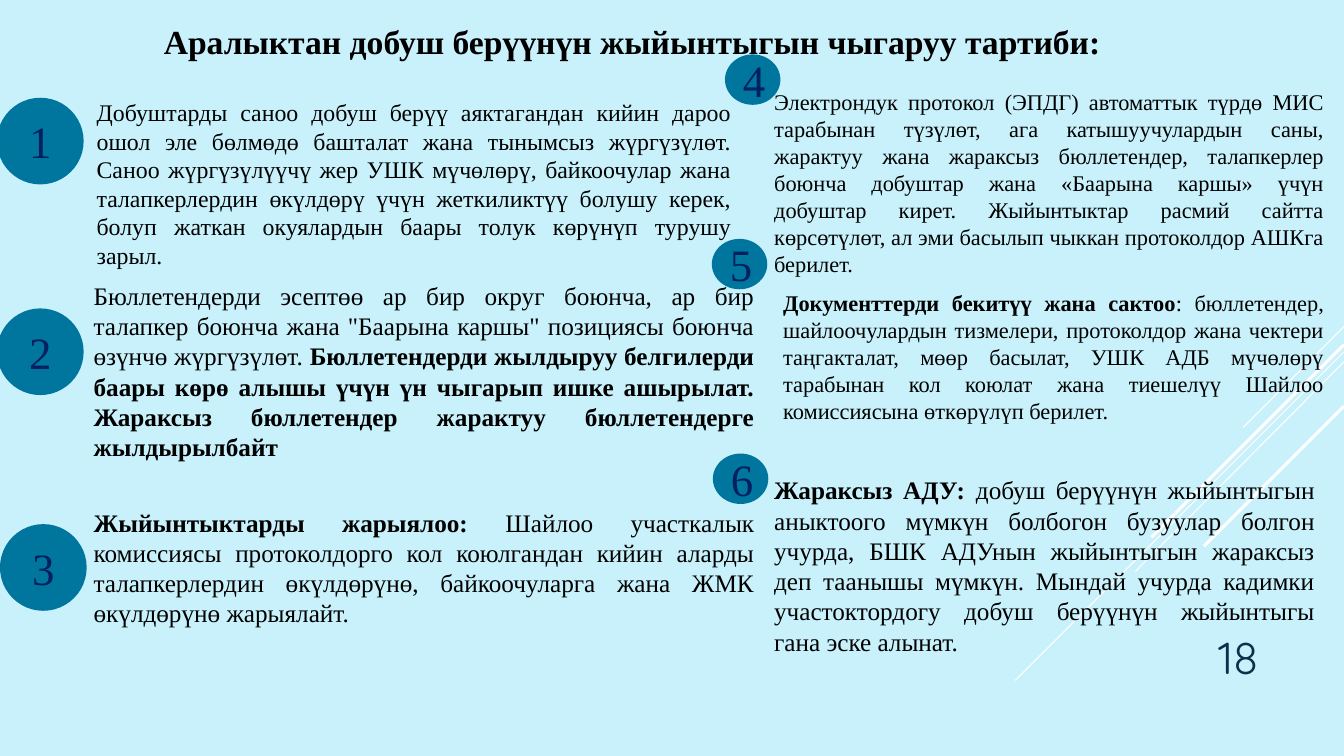
from dataclasses import dataclass

from lxml.etree import SubElement
from pptx import Presentation
from pptx.dml.color import RGBColor
from pptx.enum.shapes import MSO_CONNECTOR, MSO_SHAPE
from pptx.enum.text import MSO_ANCHOR, PP_ALIGN
from pptx.oxml.ns import qn
from pptx.util import Inches, Pt


@dataclass(frozen=True)
class Theme:
    background: RGBColor = RGBColor.from_string("C8F1FB")
    ray: RGBColor = RGBColor.from_string("FFFFFF")
    circle: RGBColor = RGBColor.from_string("00759E")
    digit: RGBColor = RGBColor.from_string("002060")
    text: RGBColor = RGBColor.from_string("000000")
    page: RGBColor = RGBColor.from_string("0A304A")
    font: str = "Times New Roman"
    page_font: str = "Quicksand"
    title_size: int = 24
    number_size: int = 32
    large: int = 18
    medium: int = 17
    small: int = 16


theme = Theme()


def style(p, size, color, align, font=theme.font):
    p.alignment = align
    p.font.name = font
    p.font.size = Pt(size)
    p.font.color.rgb = color


def add_text(box, runs, size, align, color=theme.text, font=theme.font):
    tf = s.shapes.add_textbox(*map(Inches, box)).text_frame
    tf.word_wrap = True
    p = tf.paragraphs[0]
    style(p, size, color, align, font)
    for text, bold in runs:
        r = p.add_run()
        r.text = text
        r.font.bold = bold
    return tf


prs = Presentation()
prs.slide_width = Inches(13.33)
prs.slide_height = Inches(7.5)
s = prs.slides.add_slide(prs.slide_layouts[6])
s.background.fill.solid()
s.background.fill.fore_color.rgb = theme.background

rays = [
    (3.24, 12.33, 4.24, 0.75),
    (3.49, 10.07, 6.75, 0.75),
    (3.59, 11.26, 5.67, 0.75),
    (3.42, 11.42, 5.33, 2.25),
    (4.03, 11.94, 5.42, 2.25),
]
for start_y, end_x, end_y, width in rays:
    ray = s.shapes.add_connector(
        MSO_CONNECTOR.STRAIGHT, Inches(13.33), Inches(start_y), Inches(end_x), Inches(end_y)
    )
    ray.line.color.rgb = theme.ray
    ray.line.width = Pt(width)
    SubElement(ray._element.spPr, qn("a:effectLst"))

page = add_text((11.33, 6.1, 1.25, 0.73), [("18", False)], theme.number_size,
                PP_ALIGN.RIGHT, theme.page, theme.page_font)
page.vertical_anchor = MSO_ANCHOR.BOTTOM

add_text((0.92, 0.16, 10.7, 0.5),
         [("Аралыктан добуш берүүнүн жыйынтыгын чыгаруу тартиби:", True)],
         theme.title_size, PP_ALIGN.CENTER)

big, little = (0.86, 0.86), (0.55, 0.5)
steps = [
    ((0.86, 0.92, 6.49, 1.82), theme.medium, (-0.03, 0.97, *big), [
        ("Добуштарды саноо добуш берүү аяктагандан кийин дароо ошол эле бөлмөдө башталат "
         "жана тынымсыз жүргүзүлөт. Саноо жүргүзүлүүчү жер УШК мүчөлөрү, байкоочулар жана "
         "талапкерлердин өкүлдөрү үчүн жеткиликтүү болушу керек, болуп жаткан окуялардын "
         "баары толук көрүнүп турушу зарыл.", False)]),
    ((0.83, 2.73, 6.75, 1.92), theme.large, (-0.03, 3.06, *big), [
        ("Бюллетендерди эсептөө ар бир округ боюнча, ар бир талапкер боюнча жана "
         "\"Баарына каршы\" позициясы боюнча өзүнчө жүргүзүлөт. ", False),
        ("Бюллетендерди жылдыруу белгилерди баары көрө алышы үчүн үн чыгарып ишке "
         "ашырылат. Жараксыз бюллетендер жарактуу бюллетендерге жылдырылбайт", True)]),
    ((0.83, 4.98, 6.75, 1.31), theme.large, (0, 5.2, *big), [
        ("Жыйынтыктарды жарыялоо: ", True),
        ("Шайлоо участкалык комиссиясы протоколдорго кол коюлгандан кийин аларды "
         "талапкерлердин өкүлдөрүнө, байкоочуларга жана ЖМК өкүлдөрүнө жарыялайт.", False)]),
    ((7.58, 0.83, 5.65, 1.99), theme.small, (7.19, 0.54, *little), [
        ("Электрондук протокол (ЭПДГ) автоматтык түрдө МИС тарабынан түзүлөт, ага "
         "катышуучулардын саны, жарактуу жана жараксыз бюллетендер, талапкерлер боюнча "
         "добуштар жана «Баарына каршы» үчүн добуштар кирет. Жыйынтыктар расмий сайтта "
         "көрсөтүлөт, ал эми басылып чыккан протоколдор АШКга берилет.", False)]),
    ((7.67, 2.82, 5.56, 1.45), theme.small, (7.06, 2.37, *little), [
        ("Документтерди бекитүү жана сактоо", True),
        (": бюллетендер, шайлоочулардын тизмелери, протоколдор жана чектери таңгакталат, "
         "мөөр басылат, УШК АДБ мүчөлөрү тарабынан кол коюлат жана тиешелүү Шайлоо "
         "комиссиясына өткөрүлүп берилет.", False)]),
    ((7.58, 4.66, 5.56, 1.92), theme.large, (7.07, 4.5, *little), [
        ("Жараксыз АДУ: ", True),
        ("добуш берүүнүн жыйынтыгын аныктоого мүмкүн болбогон бузуулар болгон учурда, "
         "БШК АДУнын жыйынтыгын жараксыз деп таанышы мүмкүн. Мындай учурда кадимки "
         "участоктордогу добуш берүүнүн жыйынтыгы гана эске алынат.", False)]),
]
for number, (box, size, circle, runs) in enumerate(steps, 1):
    add_text(box, runs, size, PP_ALIGN.JUSTIFY)
    sp = s.shapes.add_shape(MSO_SHAPE.OVAL, *map(Inches, circle))
    sp.shadow.inherit = False
    sp.fill.solid()
    sp.fill.fore_color.rgb = theme.circle
    sp.line.fill.background()
    tf = sp.text_frame
    tf.vertical_anchor = MSO_ANCHOR.MIDDLE
    p = tf.paragraphs[0]
    p.text = str(number)
    style(p, theme.number_size, theme.digit, PP_ALIGN.CENTER)

prs.save("out.pptx")
